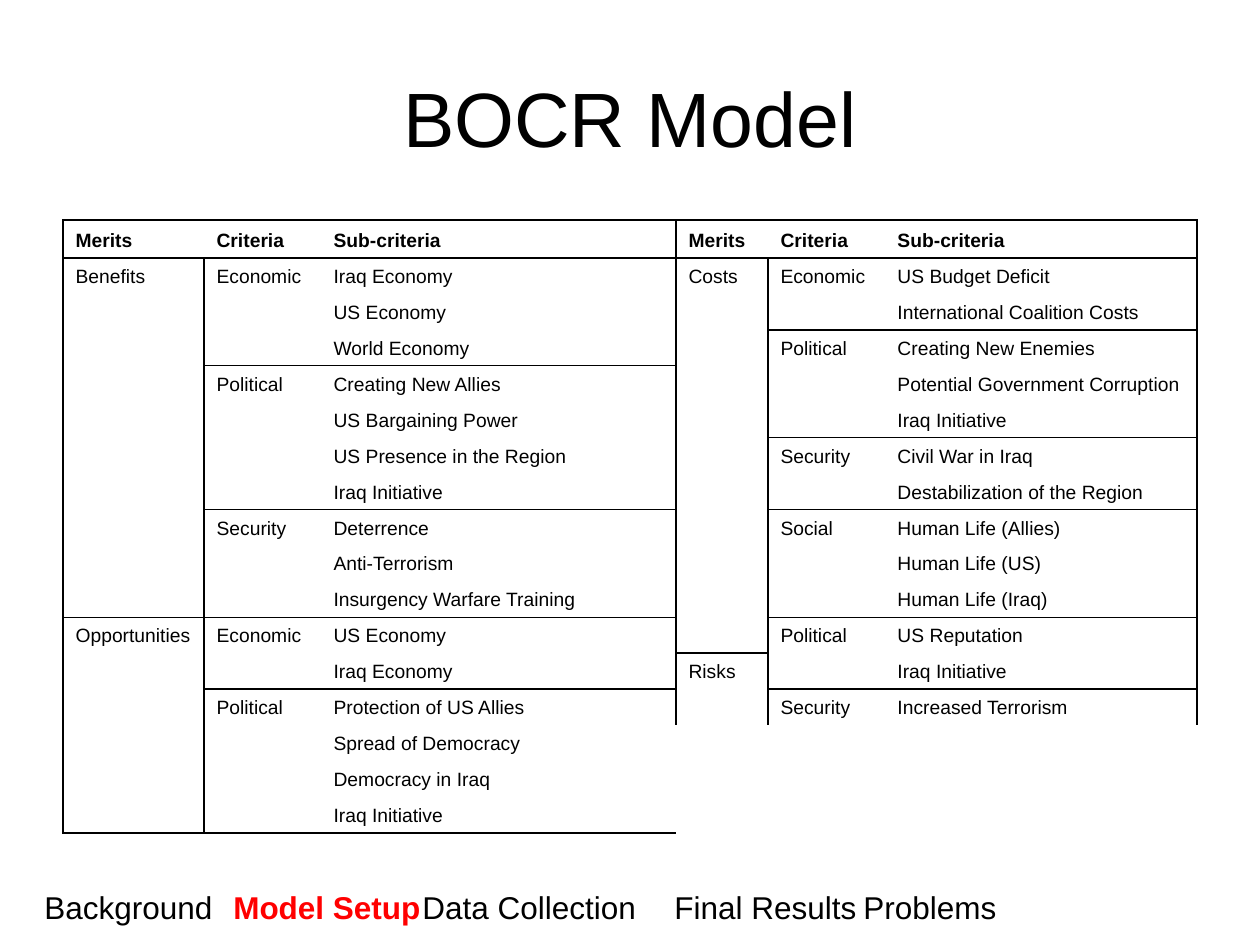
from dataclasses import dataclass

from lxml import etree
from pptx import Presentation
from pptx.dml.color import RGBColor
from pptx.enum.text import MSO_ANCHOR, PP_ALIGN
from pptx.oxml.ns import qn
from pptx.util import Pt

MIDDLE, BOTTOM = MSO_ANCHOR.MIDDLE, MSO_ANCHOR.BOTTOM
CENTER = PP_ALIGN.CENTER
NO_GRID = "{2D5ABB26-0587-4C30-8999-92F81FD0307C}"
SIDES = "LRTB"


@dataclass(frozen=True)
class Theme:
    font: str = "Arial"
    ink: str = "000000"
    active: str = "FF0000"
    title: int = 44
    nav: int = 18
    cell: int = 11
    line: int = 1


THEME = Theme()

TITLE = "BOCR Model"
SECTIONS = ["Background", "Model Setup", "Data Collection", "Final Results", "Problems"]
CURRENT = "Model Setup"
HEADINGS = ["Merits", "Criteria", "Sub-criteria"]

# Each half: merits with the number of rows they span, then criteria with sub-criteria.
HALVES = [
    (
        [("Benefits", 10), ("Opportunities", 6)],
        [
            ("Economic", ["Iraq Economy", "US Economy", "World Economy"]),
            ("Political", ["Creating New Allies", "US Bargaining Power",
                           "US Presence in the Region", "Iraq Initiative"]),
            ("Security", ["Deterrence", "Anti-Terrorism", "Insurgency Warfare Training"]),
            ("Economic", ["US Economy", "Iraq Economy"]),
            ("Political", ["Protection of US Allies", "Spread of Democracy",
                           "Democracy in Iraq", "Iraq Initiative"]),
        ],
    ),
    (
        [("Costs", 11), ("Risks", 2)],
        [
            ("Economic", ["US Budget Deficit", "International Coalition Costs"]),
            ("Political", ["Creating New Enemies", "Potential Government Corruption",
                           "Iraq Initiative"]),
            ("Security", ["Civil War in Iraq", "Destabilization of the Region"]),
            ("Social", ["Human Life (Allies)", "Human Life (US)", "Human Life (Iraq)"]),
            ("Political", ["US Reputation", "Iraq Initiative"]),
            ("Security", ["Increased Terrorism"]),
        ],
    ),
]

# Layout in px, 126 to the inch
SLIDE_W, SLIDE_H = 1260, 945
TITLE_BOX = (63, 38, 1134, 158)
NAV_BOX = (32, 882, 1197, 50)
TABLE_X, TABLE_Y = 63, 220
COL_W = [141, 117, 355, 92, 117, 312]
HEAD_H, BODY_H = 38, 573


def px(n):
    return round(n * 914400 / 126)


def style(run, size, color=THEME.ink, bold=False):
    f = run.font
    f.name, f.size, f.bold = THEME.font, Pt(size), bold
    f.color.rgb = RGBColor.from_string(color)


def plan_table():
    """Return cell texts and bordered sides, both keyed by (row, column)."""
    texts, borders = {}, {}

    def box(top, left, rows, cols):
        bottom, right = top + rows - 1, left + cols - 1
        for r in range(top, bottom + 1):
            for c in range(left, right + 1):
                edges = (c == left, c == right, r == top, r == bottom)
                borders.setdefault((r, c), set()).update(
                    side for side, on in zip(SIDES, edges) if on)

    for half, (merits, criteria) in enumerate(HALVES):
        col = half * len(HEADINGS)
        for i, heading in enumerate(HEADINGS):
            texts[0, col + i] = heading
        box(0, col, 1, len(HEADINGS))
        row = 1
        for merit, span in merits:
            texts[row, col] = merit
            box(row, col, span, 1)
            row += span
        row = 1
        for criterion, subs in criteria:
            texts[row, col + 1] = criterion
            for i, sub in enumerate(subs):
                texts[row + i, col + 2] = sub
            box(row, col + 1, len(subs), 2)
            row += len(subs)
    return texts, borders


def draw_borders(cell, sides):
    tc_pr = cell._tc.get_or_add_tcPr()
    for side in SIDES:
        ln = etree.SubElement(tc_pr, qn(f"a:ln{side}"), w=str(Pt(THEME.line)))
        if side in sides:
            fill = etree.SubElement(ln, qn("a:solidFill"))
            etree.SubElement(fill, qn("a:srgbClr"), val=THEME.ink)
        else:
            etree.SubElement(ln, qn("a:noFill"))


def add_criteria_table(s):
    texts, borders = plan_table()
    body_rows = max(row for row, _ in texts)
    edges = [round(BODY_H * i / body_rows) for i in range(body_rows + 1)]
    heights = [HEAD_H] + [b - a for a, b in zip(edges, edges[1:])]
    frame = s.shapes.add_table(len(heights), len(COL_W), px(TABLE_X), px(TABLE_Y),
                               px(sum(COL_W)), px(sum(heights)))
    table = frame.table
    table.first_row = table.horz_banding = False
    table._tbl.tblPr.find(qn("a:tableStyleId")).text = NO_GRID
    for column, w in zip(table.columns, COL_W):
        column.width = px(w)
    for r, h in enumerate(heights):
        table.rows[r].height = px(h)
        for c in range(len(COL_W)):
            cell = table.cell(r, c)
            cell.vertical_anchor = BOTTOM
            p = cell.text_frame.paragraphs[0]
            if (r, c) in texts:
                p.text = texts[r, c]
                style(p.runs[0], THEME.cell, bold=r == 0)
            else:  # keeps an empty cell as low as its row
                etree.SubElement(p._p, qn("a:endParaRPr"), sz=str(THEME.cell * 100))
            draw_borders(cell, borders.get((r, c), ()))
            cell.fill.background()


def add_title(s):
    sp = s.shapes.title
    sp.left, sp.top, sp.width, sp.height = map(px, TITLE_BOX)
    tf = sp.text_frame
    tf.text = TITLE
    tf.vertical_anchor = MIDDLE
    p = tf.paragraphs[0]
    p.alignment = CENTER
    style(p.runs[0], THEME.title)


def add_navigation(s):
    tf = s.shapes.add_textbox(*map(px, NAV_BOX)).text_frame
    tf.word_wrap = True
    p = tf.paragraphs[0]
    before, after = SECTIONS[:SECTIONS.index(CURRENT)], SECTIONS[SECTIONS.index(CURRENT) + 1:]
    for text in ("\t".join(before) + "\t", CURRENT, "\t" + "\t".join(after)):
        r = p.add_run()
        r.text = text
        active = text == CURRENT
        style(r, THEME.nav, THEME.active if active else THEME.ink, active)


def main():
    prs = Presentation()
    prs.slide_width, prs.slide_height = px(SLIDE_W), px(SLIDE_H)
    s = prs.slides.add_slide(prs.slide_layouts[5])
    add_title(s)
    add_navigation(s)
    add_criteria_table(s)
    prs.save("out.pptx")


if __name__ == "__main__":
    main()
